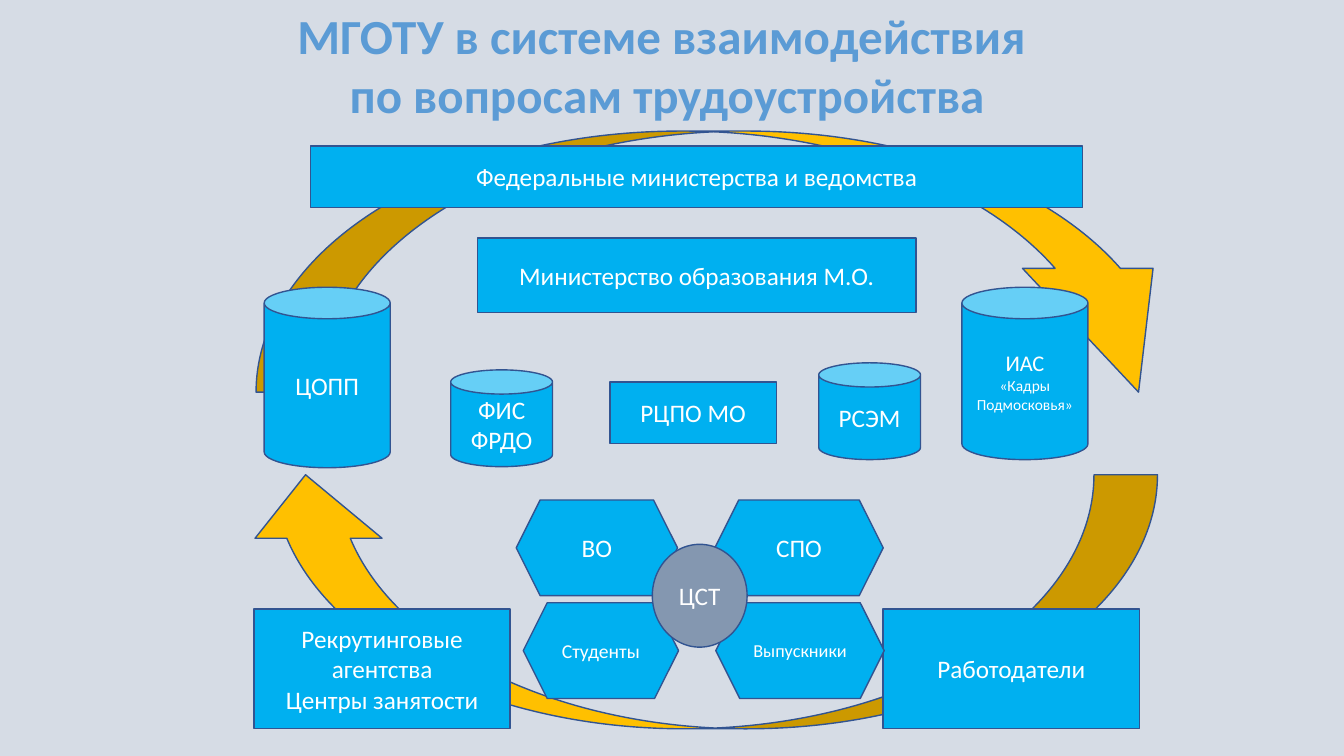
from dataclasses import dataclass

from pptx import Presentation
from pptx.dml.color import RGBColor
from pptx.enum.shapes import MSO_SHAPE
from pptx.enum.text import MSO_ANCHOR, PP_ALIGN
from pptx.util import Inches, Pt


@dataclass(frozen=True)
class Theme:
    font: str = "Calibri"
    background: str = "D6DCE5"
    title: str = "5B9BD5"
    node: str = "00B0F0"
    center: str = "8497B0"
    arrow: str = "FFC000"
    line: str = "325491"
    text: str = "FFFFFF"
    title_size: int = 35
    body_size: int = 18
    system_size: int = 16
    student_size: int = 14
    graduate_size: int = 13
    caption_size: int = 11


THEME = Theme()


def write(tf, lines, color=THEME.text, size=THEME.body_size, sizes=None, bold=False):
    tf.word_wrap = True
    tf.vertical_anchor = MSO_ANCHOR.MIDDLE
    for i, line in enumerate(lines):
        p = tf.paragraphs[0] if i == 0 else tf.add_paragraph()
        p.alignment = PP_ALIGN.CENTER
        r = p.add_run()
        r.text = line
        r.font.name = THEME.font
        r.font.size = Pt(sizes[i] if sizes else size)
        r.font.bold = bold
        r.font.color.rgb = RGBColor.from_string(color)


def add_node(shapes, kind, x, y, w, h, *lines, fill=THEME.node, **fmt):
    sp = shapes.add_shape(kind, Inches(x), Inches(y), Inches(w), Inches(h))
    sp.shadow.inherit = False
    sp.fill.solid()
    sp.fill.fore_color.rgb = RGBColor.from_string(fill)
    sp.line.color.rgb = RGBColor.from_string(THEME.line)
    sp.line.width = Pt(1)
    if lines:
        write(sp.text_frame, lines, **fmt)
    return sp


def add_title(s, x, y, w, h):
    sp = s.shapes.title
    sp.left, sp.top, sp.width, sp.height = map(Inches, (x, y, w, h))
    write(sp.text_frame,
          ["МГОТУ в системе взаимодействия ", "по вопросам трудоустройства"],
          color=THEME.title, size=THEME.title_size, bold=True)
    for p in sp.text_frame.paragraphs:
        p.line_spacing = 1.0
        p.space_before = Pt(0)


def add_cycle(shapes, x, y):
    kind = MSO_SHAPE.CURVED_DOWN_ARROW
    top = add_node(shapes, kind, x + 0.14, y, 9.4, 2.59, fill=THEME.arrow)
    top.adjustments[2] = 0.474
    bottom = add_node(shapes, kind, x, y + 3.41, 9.08, 2.52, fill=THEME.arrow)
    bottom.rotation = 180


def add_ministries(shapes, x, y, w):
    kind = MSO_SHAPE.RECTANGLE
    inner = 4.35
    add_node(shapes, kind, x, y, w, 0.61, "Федеральные министерства и ведомства")
    add_node(shapes, kind, x + (w - inner) / 2, y + 0.91, inner, 0.74,
             "Министерство образования М.О.")


def add_systems(shapes, x, y):
    kind = MSO_SHAPE.CAN
    large, small, height = 1.25, 1.01, 0.96
    add_node(shapes, kind, x, y, large, 1.79, "ЦОПП")
    add_node(shapes, kind, x + 1.85, y + 0.82, small, height, "ФИС ФРДО")
    add_node(shapes, kind, x + 6.92, y, large, 1.71, "ИАС", "«Кадры Подмосковья»",
             sizes=[THEME.system_size, THEME.caption_size])
    add_node(shapes, kind, x + 5.5, y + 0.75, small, height, "РСЭМ")
    add_node(shapes, MSO_SHAPE.RECTANGLE, x + 3.43, y + 0.94, 1.65, 0.61, "РЦПО МО")


def add_labour_market(shapes, x, y, w, h):
    kind = MSO_SHAPE.RECTANGLE
    width = 2.54
    add_node(shapes, kind, x + w - width, y, width, h, "Работодатели")
    add_node(shapes, kind, x, y, width, h, "Рекрутинговые агентства", "Центры занятости")


def add_university(shapes, x, y):
    height, pitch = 0.95, 1.02
    units = [
        ("ВО", 0, 0, 1.6, THEME.body_size),
        ("Выпускники", 1.98, 1, 1.67, THEME.graduate_size),
        ("СПО", 1.97, 0, 1.67, THEME.body_size),
        ("Студенты", 0.07, 1, 1.54, THEME.student_size),
    ]
    for label, dx, row, width, size in units:
        add_node(shapes, MSO_SHAPE.HEXAGON, x + dx, y + row * pitch, width, height,
                 label, size=size)
    add_node(shapes, MSO_SHAPE.OVAL, x + 1.35, y + 0.44, 0.94, 1.02, "ЦСТ",
             fill=THEME.center)


def main():
    prs = Presentation()
    prs.slide_width, prs.slide_height = Inches(13.33), Inches(7.5)
    s = prs.slides.add_slide(prs.slide_layouts[5])
    s.background.fill.solid()
    s.background.fill.fore_color.rgb = RGBColor.from_string(THEME.background)
    add_title(s, 0, 0, 13.24, 1.28)
    shapes = s.shapes.add_group_shape().shapes
    add_cycle(shapes, 2.4, 1.3)
    add_ministries(shapes, 3.08, 1.45, 7.66)
    add_systems(shapes, 2.62, 2.85)
    add_labour_market(shapes, 2.52, 6.04, 8.78, 1.19)
    add_university(shapes, 5.12, 4.96)
    prs.save("out.pptx")


if __name__ == "__main__":
    main()
